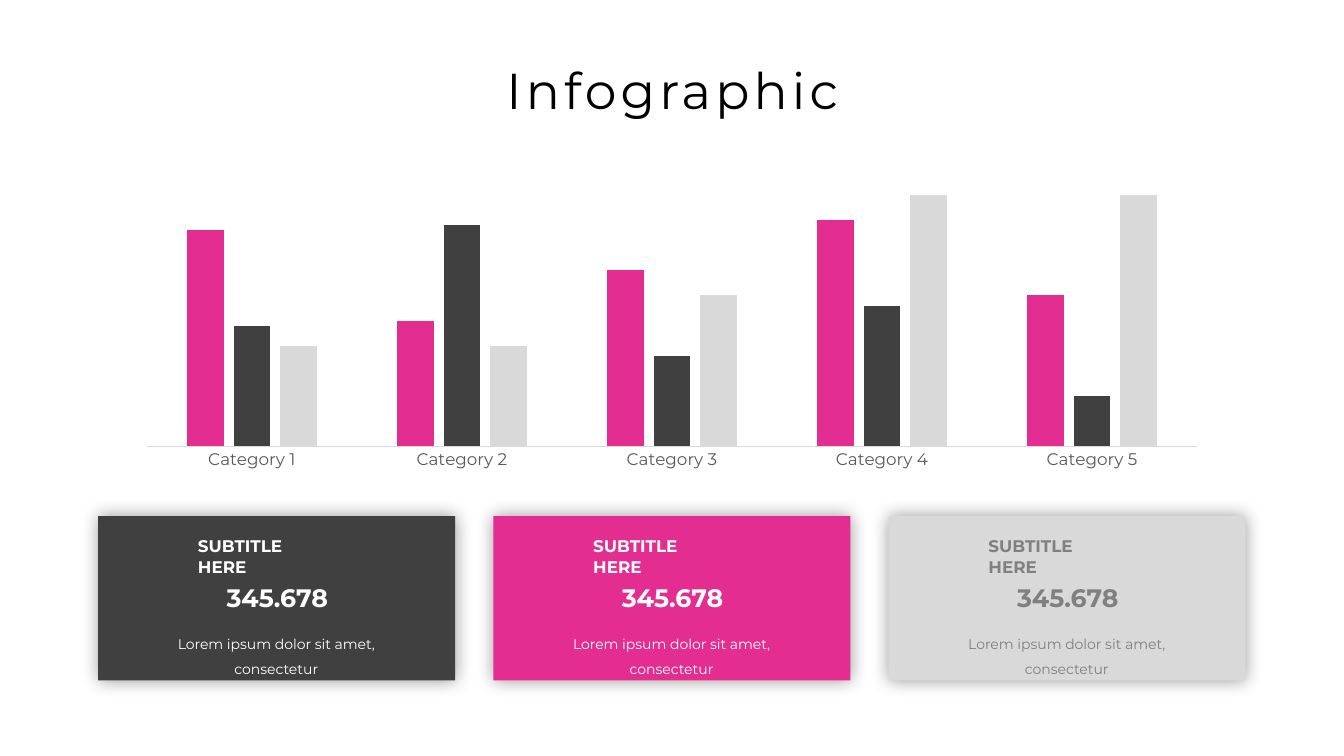
from dataclasses import dataclass

from lxml.etree import SubElement
from pptx import Presentation
from pptx.chart.data import CategoryChartData
from pptx.dml.color import RGBColor
from pptx.enum.chart import XL_CHART_TYPE, XL_TICK_LABEL_POSITION, XL_TICK_MARK
from pptx.enum.shapes import MSO_SHAPE
from pptx.enum.text import MSO_ANCHOR, MSO_AUTO_SIZE, PP_ALIGN
from pptx.oxml.ns import qn
from pptx.util import Inches, Pt


@dataclass(frozen=True)
class Theme:
    font: str = "Montserrat"
    black: str = "000000"
    white: str = "FFFFFF"
    pink: str = "E32D91"
    dark: str = "404040"
    light: str = "D9D9D9"
    gray: str = "808080"
    label: str = "595959"
    title_size: int = 36
    number_size: int = 18
    subtitle_size: int = 12
    axis_size: int = 12
    body_size: int = 10


THEME = Theme()

TITLE = "Infographic"
CATEGORIES = ["Category 1", "Category 2", "Category 3", "Category 4", "Category 5"]
SERIES = [
    ("Series 1", (86, 50, 70, 90, 60), THEME.pink),
    ("Series 2", (48, 88, 36, 56, 20), THEME.dark),
    ("Series 3", (40, 40, 60, 100, 100), THEME.light),
]
SUBTITLE = "SUBTITLE HERE"
NUMBER = "345.678"
DESCRIPTION = "Lorem ipsum dolor sit amet, consectetur"
CARDS = [
    (THEME.dark, THEME.white),
    (THEME.pink, THEME.white),
    (THEME.light, THEME.gray),
]

SLIDE_WIDTH, SLIDE_HEIGHT = 13.33, 7.5
CARD_WIDTH, CARD_HEIGHT, CARD_TOP, CARD_GAP = 3.54, 1.63, 5.12, 0.38
CARDS_LEFT = (SLIDE_WIDTH - len(CARDS) * CARD_WIDTH - (len(CARDS) - 1) * CARD_GAP) / 2
PLOT_LAYOUT = {"x": 0.02, "y": 0.02, "w": 0.96, "h": 0.89}


def color(value):
    return RGBColor.from_string(value)


def write_text(shape, text, *, size, ink, bold=False, align=PP_ALIGN.CENTER,
               line_spacing=1.0, letter_spacing=0, wrap=True):
    frame = shape.text_frame
    frame.word_wrap = wrap
    frame.auto_size = MSO_AUTO_SIZE.SHAPE_TO_FIT_TEXT
    frame.vertical_anchor = MSO_ANCHOR.TOP
    paragraph = frame.paragraphs[0]
    paragraph.alignment = align
    paragraph.line_spacing = line_spacing
    run = paragraph.add_run()
    run.text = text
    run.font.name = THEME.font
    run.font.size = Pt(size)
    run.font.bold = bold
    run.font.color.rgb = color(ink)
    if letter_spacing:
        run._r.get_or_add_rPr().set("spc", str(letter_spacing * 100))


def add_text(slide, text, left, top, width, height, **text_format):
    box = slide.shapes.add_textbox(Inches(left), Inches(top), Inches(width), Inches(height))
    write_text(box, text, **text_format)


def add_glow_shadow(shape):
    shape.shadow.inherit = False
    effects = shape._element.spPr.find(qn("a:effectLst"))
    shadow = SubElement(effects, qn("a:outerShdw"), blurRad=str(Pt(13)), dist="0",
                        dir="0", algn="ctr", rotWithShape="0")
    shade = SubElement(shadow, qn("a:srgbClr"), val=THEME.black)
    SubElement(shade, qn("a:alpha"), val="40000")


def add_title(slide):
    title = slide.shapes.title
    title.left, title.top = Inches(4.9), Inches(0.54)
    title.width, title.height = Inches(3.54), Inches(0.71)
    write_text(title, TITLE, size=THEME.title_size, ink=THEME.black,
               letter_spacing=3, wrap=False)


def fix_plot_layout(chart):
    plot_area = chart._chartSpace.chart.plotArea
    layout = plot_area.find(qn("c:layout"))
    if layout is None:
        layout = SubElement(plot_area, qn("c:layout"))
        plot_area.insert(0, layout)
    manual = SubElement(layout, qn("c:manualLayout"))
    SubElement(manual, qn("c:layoutTarget"), val="inner")
    for side in ("x", "y"):
        SubElement(manual, qn(f"c:{side}Mode"), val="edge")
    for side, share in PLOT_LAYOUT.items():
        SubElement(manual, qn(f"c:{side}"), val=str(share))


def add_column_chart(slide):
    data = CategoryChartData()
    data.categories = CATEGORIES
    for name, values, _ in SERIES:
        data.add_series(name, values)
    chart = slide.shapes.add_chart(
        XL_CHART_TYPE.COLUMN_CLUSTERED,
        Inches(1.24), Inches(1.37), Inches(10.85), Inches(3.36), data,
    ).chart
    chart.has_legend = False
    chart.has_title = False
    chart.font.name = THEME.font
    chart.font.size = Pt(THEME.body_size)
    chart.font.color.rgb = color(THEME.black)

    plot = chart.plots[0]
    plot.gap_width = 219
    plot.overlap = -27
    plot.vary_by_categories = False
    for series, (_, _, fill) in zip(plot.series, SERIES):
        series.format.fill.solid()
        series.format.fill.fore_color.rgb = color(fill)

    value_axis = chart.value_axis
    value_axis.minimum_scale, value_axis.maximum_scale = 0, 120
    value_axis.has_major_gridlines = False
    value_axis.visible = False

    category_axis = chart.category_axis
    category_axis.major_tick_mark = XL_TICK_MARK.NONE
    category_axis.minor_tick_mark = XL_TICK_MARK.NONE
    category_axis.tick_label_position = XL_TICK_LABEL_POSITION.NEXT_TO_AXIS
    category_axis.format.line.color.rgb = color(THEME.light)
    category_axis.format.line.width = Pt(0.75)
    label_font = category_axis.tick_labels.font
    label_font.name = THEME.font
    label_font.size = Pt(THEME.axis_size)
    label_font.color.rgb = color(THEME.label)
    fix_plot_layout(chart)


def add_card(slide, left, fill, ink):
    card = slide.shapes.add_shape(MSO_SHAPE.RECTANGLE, Inches(left), Inches(CARD_TOP),
                                  Inches(CARD_WIDTH), Inches(CARD_HEIGHT))
    card.fill.solid()
    card.fill.fore_color.rgb = color(fill)
    card.line.fill.background()
    add_glow_shadow(card)
    add_text(slide, DESCRIPTION, left + 0.26, CARD_TOP + 1.05, 3.01, 0.32,
             size=THEME.body_size, ink=ink, line_spacing=1.5)
    add_text(slide, NUMBER, left + 0.87, CARD_TOP + 0.61, 1.81, 0.4,
             size=THEME.number_size, ink=ink, bold=True)
    add_text(slide, SUBTITLE, left + 0.89, CARD_TOP + 0.15, 1.55, 0.3,
             size=THEME.subtitle_size, ink=ink, bold=True, align=PP_ALIGN.LEFT)


def main():
    presentation = Presentation()
    presentation.slide_width = Inches(SLIDE_WIDTH)
    presentation.slide_height = Inches(SLIDE_HEIGHT)
    slide = presentation.slides.add_slide(presentation.slide_layouts[5])
    add_title(slide)
    add_column_chart(slide)
    for index, (fill, ink) in enumerate(CARDS):
        add_card(slide, CARDS_LEFT + index * (CARD_WIDTH + CARD_GAP), fill, ink)
    presentation.save("out.pptx")


if __name__ == "__main__":
    main()
